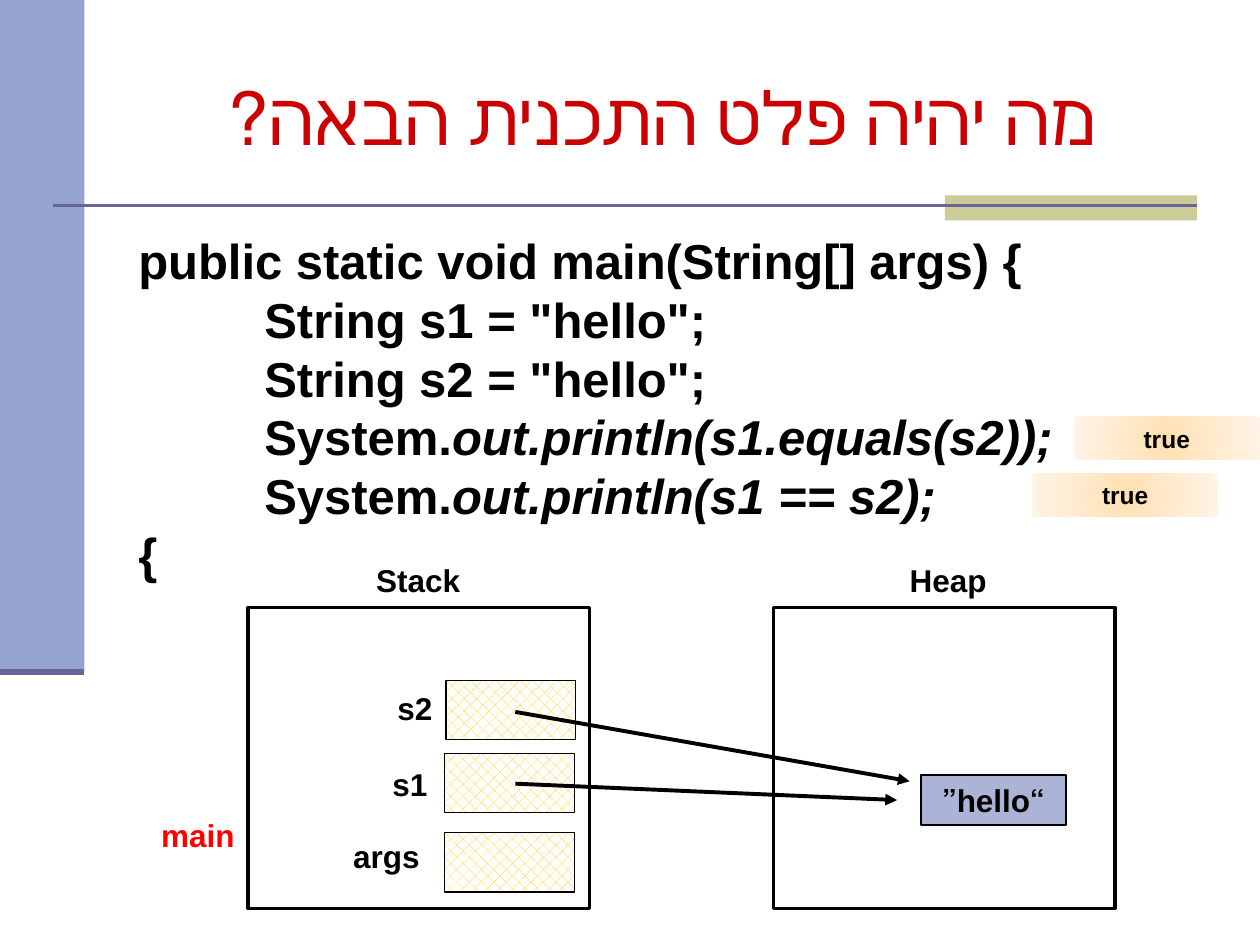
from lxml import etree
from pptx import Presentation
from pptx.dml.color import RGBColor
from pptx.enum.dml import MSO_PATTERN
from pptx.enum.shapes import MSO_CONNECTOR, MSO_SHAPE
from pptx.enum.text import MSO_ANCHOR, MSO_AUTO_SIZE, PP_ALIGN
from pptx.oxml import parse_xml
from pptx.oxml.ns import nsdecls, qn
from pptx.util import Inches, Pt

RECTANGLE = MSO_SHAPE.RECTANGLE
STRAIGHT = MSO_CONNECTOR.STRAIGHT
CENTER, RIGHT = PP_ALIGN.CENTER, PP_ALIGN.RIGHT
MIDDLE = MSO_ANCHOR.MIDDLE
GROW = MSO_AUTO_SIZE.SHAPE_TO_FIT_TEXT
HATCH = MSO_PATTERN.PERCENT_30

COLORS = {
    "sidebar": "95A3D1", "accent": "CCCC99", "rule": "666699",
    "title": "CC0000", "text": "000000", "main": "FF0000",
    "paper": "FFFFFF", "hatch": "FFCC00", "object": "ABB4D7",
    "glow_inner": "FFDFAF", "glow_middle": "FFEACE", "glow_outer": "FFF4E7",
}

# The slide is a grid of 100 columns and 75 rows
CELL = Inches(0.1)
COLUMNS, ROWS = 100, 75

TITLE = "מה יהיה פלט התכנית הבאה?"
# Each line of code: upright part, italic part
CODE = [
    ("public static void main(String[] args) {", ""),
    ('\tString s1 = "hello";', ""),
    ('\tString s2 = "hello";', ""),
    ("\tSystem.", "out.println(s1.equals(s2));"),
    ("\tSystem.", "out.println(s1 == s2);"),
    ("{", ""),
]
# Label, column, row, width, colour
LABELS = [
    ("Stack", 28.7, 44, 8.8, "text"),
    ("Heap", 71.1, 44, 8.2, "text"),
    ("args", 27, 65.9, 7.3, "text"),
    ("s1", 30.1, 60.2, 4.8, "text"),
    ("s2", 30.5, 54.2, 4.8, "text"),
    ("main", 11.7, 64.3, 7.9, "main"),
]
FRAME_COLUMNS = (19.7, 61.4)
VARIABLES = [(35.3, 66.1), (35.3, 59.8), (35.4, 54)]
REFERENCES = [((40.9, 56.5), (72.2, 62)), ((40.9, 62.2), (71.2, 63.5))]
OUTPUTS = [(85.2, 33.1), (81.9, 37.6)]


def grid(*cells):
    return [round(cell * CELL) for cell in cells]


def color(name):
    return RGBColor.from_string(COLORS[name])


def style_font(font, size, name="text", face="Arial", bold=True):
    font.size, font.name, font.bold = Pt(size), face, bold
    font.color.rgb = color(name)


def write_rtl(shape, text, align, size, name="text", face="Arial", bold=True):
    paragraph = shape.text_frame.paragraphs[0]
    paragraph.text = text
    paragraph.alignment = align
    paragraph._p.get_or_add_pPr().set("rtl", "1")
    style_font(paragraph.font, size, name, face, bold)


def add_box(slide, cells, fill=None, line_width=0):
    shape = slide.shapes.add_shape(RECTANGLE, *grid(*cells))
    shape.shadow.inherit = False
    if fill:
        shape.fill.solid()
        shape.fill.fore_color.rgb = color(fill)
    if line_width:
        shape.line.color.rgb = color("text")
        shape.line.width = Pt(line_width)
    else:
        shape.line.fill.background()
    return shape


def add_line(slide, start, end, name, width, arrow=False):
    line = slide.shapes.add_connector(STRAIGHT, *grid(*start, *end))
    line.line.color.rgb = color(name)
    line.line.width = Pt(width)
    if arrow:
        etree.SubElement(line.line._get_or_add_ln(), qn("a:tailEnd"), type="triangle")
    etree.SubElement(line._element.spPr, qn("a:effectLst"))


def add_label(slide, text, column, row, width, name):
    label = slide.shapes.add_textbox(*grid(column, row, width, 4))
    label.text_frame.word_wrap = False
    label.text_frame.auto_size = GROW
    write_rtl(label, text, RIGHT, 18, name)


def add_variable(slide, column, row):
    box = add_box(slide, (column, row, 10.3, 4.7), line_width=0.75)
    box.fill.patterned()
    box.fill.pattern = HATCH
    box.fill.fore_color.rgb = color("hatch")
    box.fill.back_color.rgb = color("paper")


def add_output(slide, column, row):
    box = add_box(slide, (column, row, 14.8, 3.4), "glow_middle")
    # Radial glow from the centre outwards
    stops = "".join(
        f'<a:gs pos="{position}"><a:srgbClr val="{COLORS[name]}"/></a:gs>'
        for position, name in ((0, "glow_inner"), (50000, "glow_middle"), (100000, "glow_outer"))
    )
    glow = parse_xml(
        f'<a:gradFill {nsdecls("a")}><a:gsLst>{stops}</a:gsLst><a:path path="circle">'
        '<a:fillToRect l="50000" t="50000" r="50000" b="50000"/></a:path></a:gradFill>'
    )
    properties = box._element.spPr
    properties.replace(properties.find(qn("a:solidFill")), glow)
    write_rtl(box, "true", CENTER, 14)


def add_title(slide):
    title = slide.shapes.title
    title.left, title.top, title.width, title.height = grid(10, 3, 85, 12.5)
    title.text_frame.vertical_anchor = MIDDLE
    write_rtl(title, TITLE, CENTER, 42, "title", "Times New Roman", False)


def add_code(slide):
    frame = slide.shapes.add_textbox(*grid(10, 17.8, 76.7, 29.3)).text_frame
    frame.word_wrap = True
    frame.auto_size = GROW
    for index, (upright, italic) in enumerate(CODE):
        paragraph = frame.add_paragraph() if index else frame.paragraphs[0]
        # One tab is ten columns wide
        paragraph._p.get_or_add_pPr().set("defTabSz", str(10 * CELL))
        style_font(paragraph.font, 28)
        paragraph.add_run().text = upright
        if italic:
            run = paragraph.add_run()
            run.text = italic
            run.font.italic = True


def main():
    presentation = Presentation()
    presentation.slide_width, presentation.slide_height = grid(COLUMNS, ROWS)
    slide = presentation.slides.add_slide(presentation.slide_layouts[5])

    # Sidebar and rules
    add_box(slide, (0, 0, 6.7, 53.3), "sidebar")
    add_box(slide, (75, 15.5, 20, 2), "accent")
    add_line(slide, (4.2, 16.3), (95, 16.3), "rule", 1.5)
    add_line(slide, (0, 53.3), (6.7, 53.3), "rule", 3.5)

    add_title(slide)
    add_code(slide)

    # Stack and heap
    for column in FRAME_COLUMNS:
        add_box(slide, (column, 48.2, 27.1, 23.9), "paper", 2)
    for variable in VARIABLES:
        add_variable(slide, *variable)
    for label in LABELS:
        add_label(slide, *label)
    string_object = add_box(slide, (73.1, 61.5, 11.5, 4), "object", 1)
    write_rtl(string_object, "“hello”", CENTER, 18)
    for start, end in REFERENCES:
        add_line(slide, start, end, "text", 2.25, arrow=True)

    # Printed results
    for output in OUTPUTS:
        add_output(slide, *output)

    presentation.save("out.pptx")


if __name__ == "__main__":
    main()
